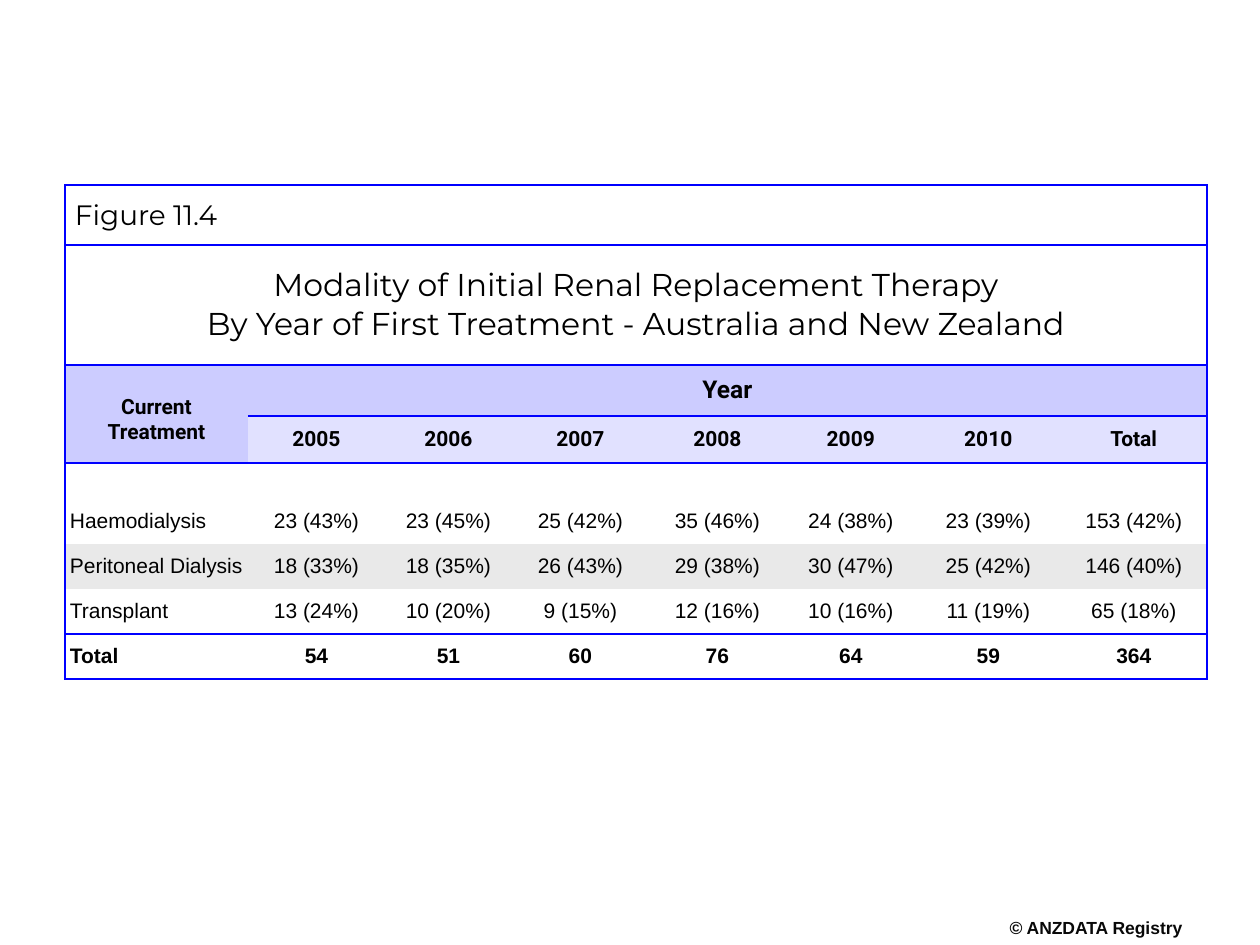
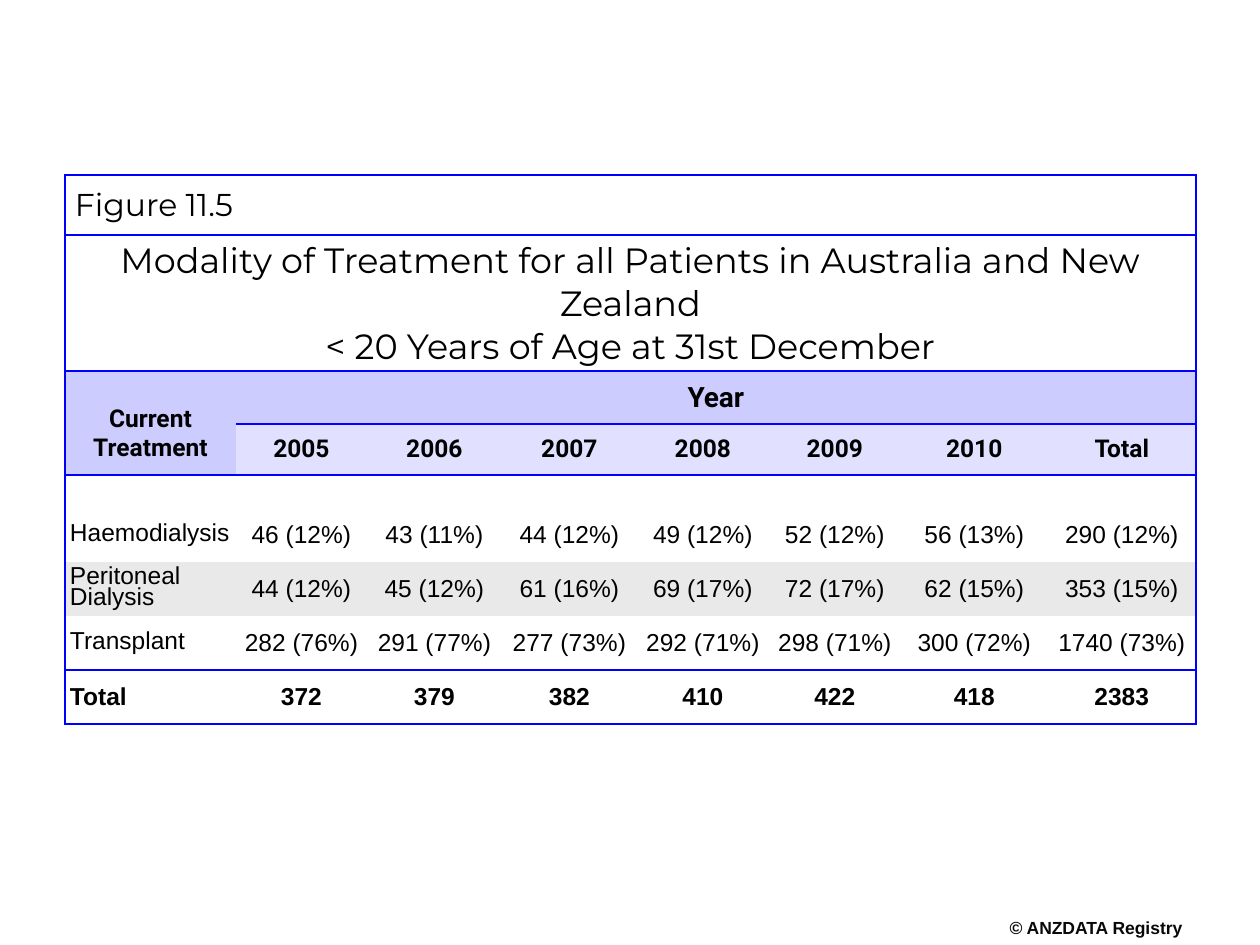
from dataclasses import dataclass
from typing import Any

from lxml import etree
from pptx import Presentation
from pptx.dml.color import RGBColor
from pptx.enum.text import MSO_ANCHOR as Anchor, PP_ALIGN as Align
from pptx.oxml.ns import qn
from pptx.util import Emu, Pt

PX_PER_INCH = 126


@dataclass(frozen=True)
class Theme:
    ink: str = "000000"
    footer_ink: str = "080808"
    rule: str = "0000FF"
    header_fill: str = "CCCCFF"
    year_fill: str = "E1E1FF"
    stripe_fill: str = "E9E9E9"
    title_font: str = "Montserrat"
    header_font: str = "Roboto"
    body_font: str = "Arial"
    footer_size: int = 10
    spacer_size: int = 6
    rule_width: int = 1
    # Points added to the body size of a table
    figure_step: int = 4
    title_step: int = 6
    year_step: int = 2


@dataclass(frozen=True)
class TextStyle:
    font: str
    size: int
    bold: bool = False
    align: Any = Align.CENTER
    color: str = "000000"
    line_spacing: float | None = None


@dataclass(frozen=True)
class ModalityTable:
    figure: str
    title: list[str]
    counts: list[list[int]]
    top: int
    columns: list[int]
    rows: list[int]
    body_size: int
    header_margin: int
    label_spacing: float | None = None


THEME = Theme()
LEFT = 65
PADDING = 5
FIGURE_PADDING = 10
YEARS = ["2005", "2006", "2007", "2008", "2009", "2010"]
TREATMENTS = ["Haemodialysis", "Peritoneal Dialysis", "Transplant"]
FIGURE_ROW, TITLE_ROW, HEADER_ROW, YEAR_ROW, SPACER_ROW, FIRST_ROW = range(6)
STRIPE_ROW = FIRST_ROW + 1
TOTAL_ROW = FIRST_ROW + len(TREATMENTS)
ROW_COUNT = TOTAL_ROW + 1
COLUMN_COUNT = len(YEARS) + 2
RULED_ROWS = {FIGURE_ROW, TITLE_ROW, HEADER_ROW, YEAR_ROW, SPACER_ROW,
              TOTAL_ROW, ROW_COUNT}

TABLES = [
    ModalityTable(
        figure="Figure 11.4",
        title=["Modality of Initial Renal Replacement Therapy",
               "By Year of First Treatment - Australia and New Zealand"],
        counts=[[23, 23, 25, 35, 24, 23],
                [18, 18, 26, 29, 30, 25],
                [13, 10, 9, 12, 10, 11]],
        top=185,
        columns=[183, 137, 127, 137, 137, 130, 145, 146],
        rows=[60, 120, 51, 47, 36, 45, 45, 45, 45],
        body_size=12,
        header_margin=30,
    ),
    ModalityTable(
        figure="Figure 11.5",
        title=["Modality of Treatment for all Patients in Australia and New Zealand",
               "< 20 Years of Age at 31st December"],
        counts=[[46, 43, 44, 49, 52, 56],
                [44, 45, 61, 69, 72, 62],
                [282, 291, 277, 292, 298, 300]],
        top=175,
        columns=[171, 131, 135, 135, 132, 132, 147, 148],
        rows=[60, 136, 53, 51, 33, 54, 54, 54, 54],
        body_size=14,
        header_margin=34,
        label_spacing=0.75,
    ),
]


def px(value: int) -> Emu:
    return Emu(round(value * 914400 / PX_PER_INCH))


def set_values(target: Any, values: dict[str, Any]) -> None:
    for name, value in values.items():
        setattr(target, name, value)


def write_text(text_frame: Any, lines: list[str], style: TextStyle) -> None:
    for index, line in enumerate(lines):
        paragraph = text_frame.paragraphs[0] if index == 0 else text_frame.add_paragraph()
        set_values(paragraph, {"alignment": style.align, "line_spacing": style.line_spacing})
        run = paragraph.add_run()
        run.text = line
        set_values(run.font, {"name": style.font, "size": Pt(style.size), "bold": style.bold})
        run.font.color.rgb = RGBColor.from_string(style.color)


def set_borders(cell: Any, row: int, column: int) -> None:
    """Rule the outer frame and the ruled rows; clear every other edge."""
    below_header = row == YEAR_ROW and column == 0
    edges = {
        "a:lnL": column == 0,
        "a:lnR": column + cell.span_width == COLUMN_COUNT,
        "a:lnT": row in RULED_ROWS and not below_header,
        "a:lnB": row + cell.span_height in RULED_ROWS,
    }
    properties = cell._tc.get_or_add_tcPr()
    for tag, visible in edges.items():
        line = etree.SubElement(properties, qn(tag), w=str(Pt(THEME.rule_width)))
        if visible:
            fill = etree.SubElement(line, qn("a:solidFill"))
            etree.SubElement(fill, qn("a:srgbClr"), val=THEME.rule)
        else:
            etree.SubElement(line, qn("a:noFill"))


def fill_color(row: int, column: int) -> str | None:
    if row == HEADER_ROW or (row == YEAR_ROW and column == 0):
        return THEME.header_fill
    return {YEAR_ROW: THEME.year_fill, STRIPE_ROW: THEME.stripe_fill}.get(row)


def format_cells(table: Any) -> None:
    for row in range(ROW_COUNT):
        for column in range(COLUMN_COUNT):
            cell = table.cell(row, column)
            padding = FIGURE_PADDING if row == FIGURE_ROW else PADDING
            sides = ("margin_left", "margin_right", "margin_top", "margin_bottom")
            set_values(cell, dict.fromkeys(sides, px(padding)))
            cell.vertical_anchor = Anchor.MIDDLE
            set_borders(cell, row, column)
            color = fill_color(row, column)
            if color:
                cell.fill.solid()
                cell.fill.fore_color.rgb = RGBColor.from_string(color)
            else:
                cell.fill.background()
            if row == SPACER_ROW:
                end = cell.text_frame.paragraphs[0]._p.get_or_add_endParaRPr()
                end.set("sz", str(THEME.spacer_size * 100))


def write_headings(table: Any, content: ModalityTable) -> None:
    size = content.body_size
    header = TextStyle(THEME.header_font, size, bold=True)
    headings = [
        (FIGURE_ROW, 0, [content.figure],
         TextStyle(THEME.title_font, size + THEME.figure_step, align=Align.LEFT)),
        (TITLE_ROW, 0, content.title, TextStyle(THEME.title_font, size + THEME.title_step)),
        (HEADER_ROW, 0, ["Current", "Treatment"], header),
        (HEADER_ROW, 1, ["Year"],
         TextStyle(THEME.header_font, size + THEME.year_step, bold=True)),
    ]
    headings += [(YEAR_ROW, column, [label], header)
                 for column, label in enumerate(YEARS + ["Total"], start=1)]
    for row, column, lines, style in headings:
        write_text(table.cell(row, column).text_frame, lines, style)
    set_values(table.cell(HEADER_ROW, 0),
               {"vertical_anchor": Anchor.TOP, "margin_top": px(content.header_margin)})


def write_body(table: Any, content: ModalityTable) -> None:
    """Write counts with their share of each column, then the totals."""
    counts = [values + [sum(values)] for values in content.counts]
    totals = [sum(column) for column in zip(*counts)]
    body = [[label] + [f"{count} ({count / total:.0%})" for count, total in zip(values, totals)]
            for label, values in zip(TREATMENTS, counts)]
    body.append(["Total"] + [str(total) for total in totals])
    for row, texts in enumerate(body, start=FIRST_ROW):
        is_total = row == TOTAL_ROW
        for column, text in enumerate(texts):
            is_label = column == 0
            style = TextStyle(
                THEME.body_font, content.body_size, bold=is_total,
                align=Align.LEFT if is_label else Align.CENTER,
                line_spacing=content.label_spacing if is_label and not is_total else None)
            write_text(table.cell(row, column).text_frame, [text], style)


def add_modality_table(slide: Any, content: ModalityTable) -> None:
    table = slide.shapes.add_table(
        ROW_COUNT, COLUMN_COUNT, px(LEFT), px(content.top),
        px(sum(content.columns)), px(sum(content.rows))).table
    set_values(table, {"first_row": False, "horz_banding": False})
    for column, width in zip(table.columns, content.columns):
        column.width = px(width)
    for row, height in zip(table.rows, content.rows):
        row.height = px(height)
    last = COLUMN_COUNT - 1
    for start, end in [((FIGURE_ROW, 0), (FIGURE_ROW, last)),
                       ((TITLE_ROW, 0), (TITLE_ROW, last)),
                       ((HEADER_ROW, 0), (YEAR_ROW, 0)),
                       ((HEADER_ROW, 1), (HEADER_ROW, last))]:
        table.cell(*start).merge(table.cell(*end))
    format_cells(table)
    write_headings(table, content)
    write_body(table, content)


def add_footer(slide: Any) -> None:
    text_frame = slide.shapes.add_textbox(px(1007), px(917), px(178), px(21)).text_frame
    set_values(text_frame, {"margin_left": 0, "margin_right": 0, "margin_top": 0,
                            "margin_bottom": 0, "word_wrap": False})
    write_text(text_frame, ["© ANZDATA Registry"],
               TextStyle(THEME.body_font, THEME.footer_size, bold=True, color=THEME.footer_ink))


def main() -> None:
    presentation = Presentation()
    set_values(presentation, {"slide_width": px(1260), "slide_height": px(945)})
    blank_layout = presentation.slide_layouts[6]
    for content in TABLES:
        slide = presentation.slides.add_slide(blank_layout)
        add_footer(slide)
        add_modality_table(slide, content)
    presentation.save("out.pptx")


if __name__ == "__main__":
    main()
